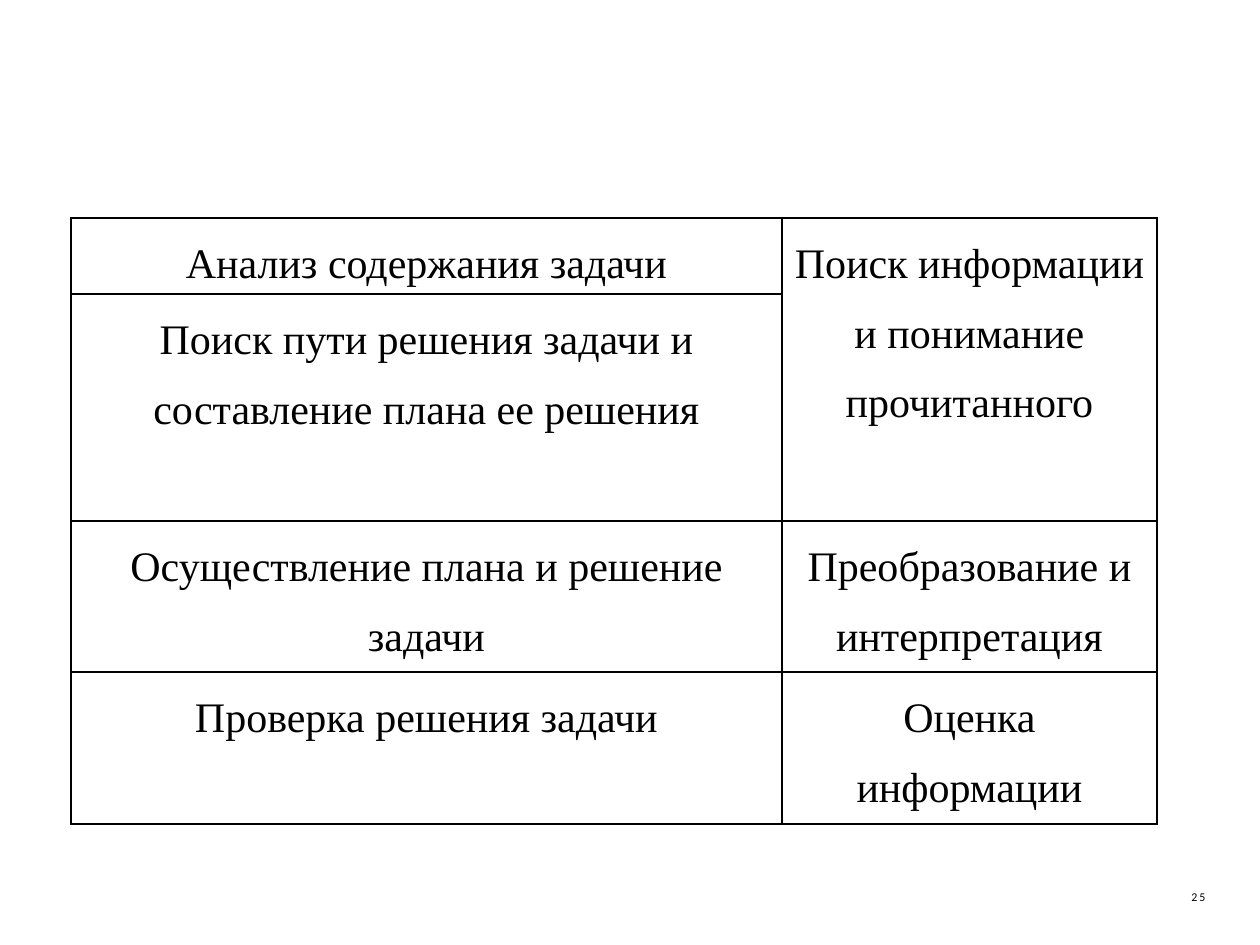
from lxml import etree
from pptx import Presentation
from pptx.dml.color import RGBColor
from pptx.enum.text import MSO_ANCHOR, PP_ALIGN
from pptx.oxml.ns import qn
from pptx.util import Pt

CENTER = PP_ALIGN.CENTER
MIDDLE = MSO_ANCHOR.MIDDLE
PX_PER_INCH = 126
COLORS = {"text": "000000", "border": "000000"}


def px(n):
    return round(n * 914400 / PX_PER_INCH)


class SlideBuilder:
    table_font = "Times New Roman"
    number_font = "Calibri"

    def __init__(self, prs):
        self.slide = prs.slides.add_slide(prs.slide_layouts[6])

    def format(self, p, font, size):
        p.alignment = CENTER
        p.font.name = font
        p.font.size = Pt(size)
        p.font.color.rgb = RGBColor.from_string(COLORS["text"])

    def border(self, cell):
        tc_pr = cell._tc.get_or_add_tcPr()
        for side in ("lnL", "lnR", "lnT", "lnB"):
            ln = etree.SubElement(tc_pr, qn(f"a:{side}"), w=str(Pt(1)))
            fill = etree.SubElement(ln, qn("a:solidFill"))
            etree.SubElement(fill, qn("a:srgbClr"), val=COLORS["border"])

    def cell(self, cell, text):
        cell.margin_left = cell.margin_right = px(8)
        cell.margin_top = cell.margin_bottom = 0
        self.border(cell)
        cell.fill.background()
        p = cell.text_frame.paragraphs[0]
        p.text = text
        p.line_spacing = 1.5
        self.format(p, self.table_font, 24)

    def table(self, left, top, widths, heights, rows):
        table = self.slide.shapes.add_table(
            len(heights), len(widths), px(left), px(top),
            px(sum(widths)), px(sum(heights))).table
        table.first_row = table.horz_banding = False
        for column, width in zip(table.columns, widths):
            column.width = px(width)
        for row, height in zip(table.rows, heights):
            row.height = px(height)
        for i, texts in enumerate(rows):
            for j, text in enumerate(texts):
                self.cell(table.cell(i, j), text)
        return table

    def number(self, left, top, width, height, text):
        sp = self.slide.shapes.add_textbox(px(left), px(top), px(width), px(height))
        tf = sp.text_frame
        tf.word_wrap = True
        tf.vertical_anchor = MIDDLE
        p = tf.paragraphs[0]
        r = p.add_run()
        r.text = text
        self.format(p, self.number_font, 6.8)
        r.font._element.set("spc", "110")


def main():
    prs = Presentation()
    prs.slide_width, prs.slide_height = px(1260), px(945)
    s = SlideBuilder(prs)
    stages = s.table(71, 218, [711, 375], [76, 227, 151, 152], [
        ("Анализ содержания задачи", "Поиск информации и понимание прочитанного"),
        ("Поиск пути решения задачи и составление плана ее решения", ""),
        ("Осуществление плана и решение задачи", "Преобразование и интерпретация"),
        ("Проверка решения задачи", "Оценка информации"),
    ])
    stages.cell(0, 1).merge(stages.cell(1, 1))
    s.number(1157, 872, 83, 50, "25")
    prs.save("out.pptx")


if __name__ == "__main__":
    main()
